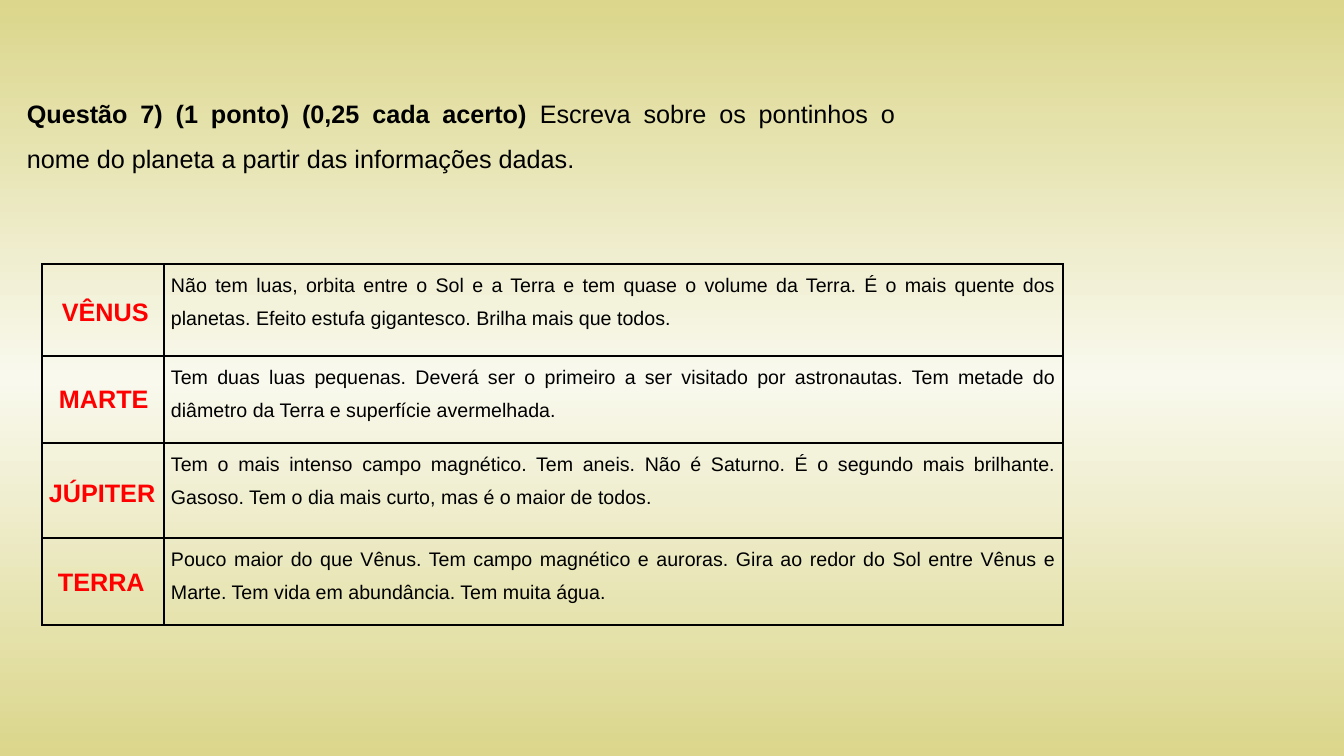
"""Build the quiz slide that matches planets to their descriptions."""
from pptx import Presentation, util as u
from pptx.dml.color import RGBColor
from pptx.enum import text as t
from pptx.oxml import parse_xml
from pptx.oxml.ns import nsdecls, qn

PX = 914400 / 100.8
SIZE = (1344, 756)
BLACK = RGBColor(0, 0, 0)
RED = RGBColor(0xFF, 0, 0)
OLIVE = RGBColor(0xDB, 0xD6, 0x8B)
CREAM = RGBColor(0xF9, 0xF9, 0xEE)
STOPS = [(0, OLIVE), (50, CREAM), (100, OLIVE)]
FONT = "Arial"

HEAD = "Questão 7) (1 ponto) (0,25 cada acerto) "
TASK = "Escreva sobre os pontinhos o nome do planeta a partir das informações dadas."
HINTS = [
    "Não tem luas, orbita entre o Sol e a Terra e tem quase o volume da Terra. É o mais quente dos planetas. Efeito estufa gigantesco. Brilha mais que todos.",
    "Tem duas luas pequenas. Deverá ser o primeiro a ser visitado por astronautas. Tem metade do diâmetro da Terra e superfície avermelhada.",
    "Tem o mais intenso campo magnético. Tem aneis. Não é Saturno. É o segundo mais brilhante. Gasoso. Tem o dia mais curto, mas é o maior de todos.",
    "Pouco maior do que Vênus. Tem campo magnético e auroras. Gira ao redor do Sol entre Vênus e Marte. Tem vida em abundância. Tem muita água.",
]
NAMES = [
    ("VÊNUS", 52, 291, 117),
    ("MARTE", 49, 378, 123),
    ("JÚPITER", 39, 472, 130),
    ("TERRA", 48, 561, 118),
]
HEAD_BOX = (17, 78, 888, 97)
NAME_H = 40
GRID = (42, 264)
COLS = [122, 899]
ROWS = [92, 87, 95, 87]
INSET = 7


def px(n):
    return u.Emu(round(n * PX))


def style(run, size, color, bold=False):
    run.font.name = FONT
    run.font.size = u.Pt(size)
    run.font.bold = bold
    run.font.color.rgb = color


def justify(para):
    para.alignment = t.PP_ALIGN.JUSTIFY
    para.line_spacing = 1.5


def add_box(slide, box):
    frame = slide.shapes.add_textbox(*map(px, box)).text_frame
    frame.word_wrap = True
    return frame.paragraphs[0]


def paint(slide):
    fill = slide.background.fill
    fill.gradient()
    fill.gradient_angle = 270
    stops = slide.element.find(".//" + qn("a:gsLst"))
    for old in list(stops):
        stops.remove(old)
    for pos, color in STOPS:
        stops.append(parse_xml(
            f'<a:gs {nsdecls("a")} pos="{pos * 1000}">'
            f'<a:srgbClr val="{color}"/></a:gs>'))


def frame_cell(cell):
    cell.fill.background()
    props = cell._tc.get_or_add_tcPr()
    for i, side in enumerate(("lnL", "lnR", "lnT", "lnB")):
        props.insert(i, parse_xml(
            f'<a:{side} {nsdecls("a")} w="{u.Pt(1)}"><a:solidFill>'
            f'<a:srgbClr val="{BLACK}"/></a:solidFill></a:{side}>'))


def add_grid(slide):
    area = (*GRID, sum(COLS), sum(ROWS))
    table = slide.shapes.add_table(
        len(ROWS), len(COLS), *map(px, area)).table
    table.first_row = table.horz_banding = False
    for col, width in zip(table.columns, COLS):
        col.width = px(width)
    for row, height, hint in zip(table.rows, ROWS, HINTS):
        row.height = px(height)
        for cell in row.cells:
            frame_cell(cell)
        cell = row.cells[1]
        cell.margin_left = cell.margin_right = px(INSET)
        cell.margin_top = cell.margin_bottom = 0
        para = cell.text_frame.paragraphs[0]
        para.text = hint
        justify(para)
        style(para.runs[0], 14, BLACK)


def main():
    deck = Presentation()
    deck.slide_width, deck.slide_height = map(px, SIZE)
    slide = deck.slides.add_slide(deck.slide_layouts[6])
    paint(slide)

    para = add_box(slide, HEAD_BOX)
    justify(para)
    for words, bold in ((HEAD, True), (TASK, False)):
        run = para.add_run()
        run.text = words
        style(run, 18, BLACK, bold)

    add_grid(slide)
    for name, *box in NAMES:
        para = add_box(slide, (*box, NAME_H))
        para.text = name
        style(para.runs[0], 18, RED, True)
    deck.save("out.pptx")


if __name__ == "__main__":
    main()
